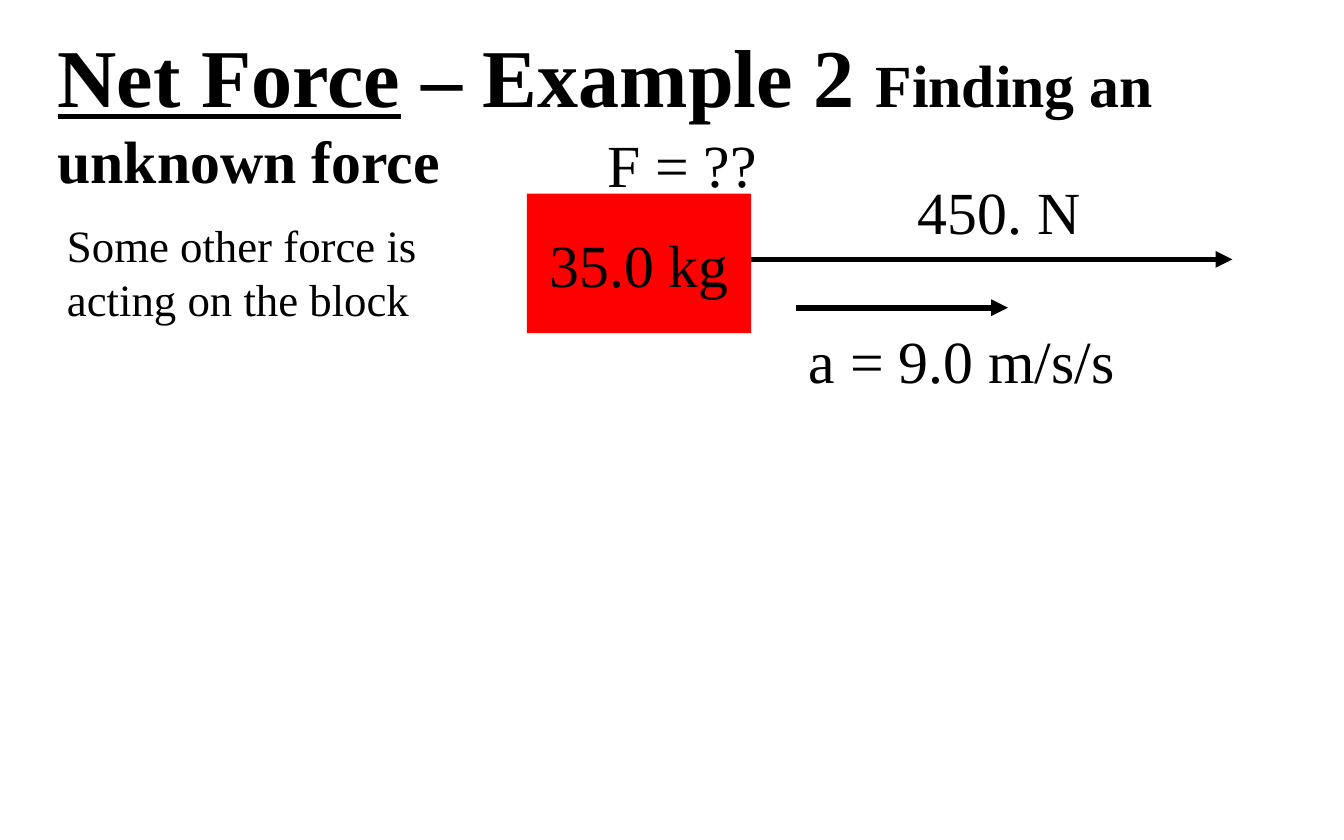
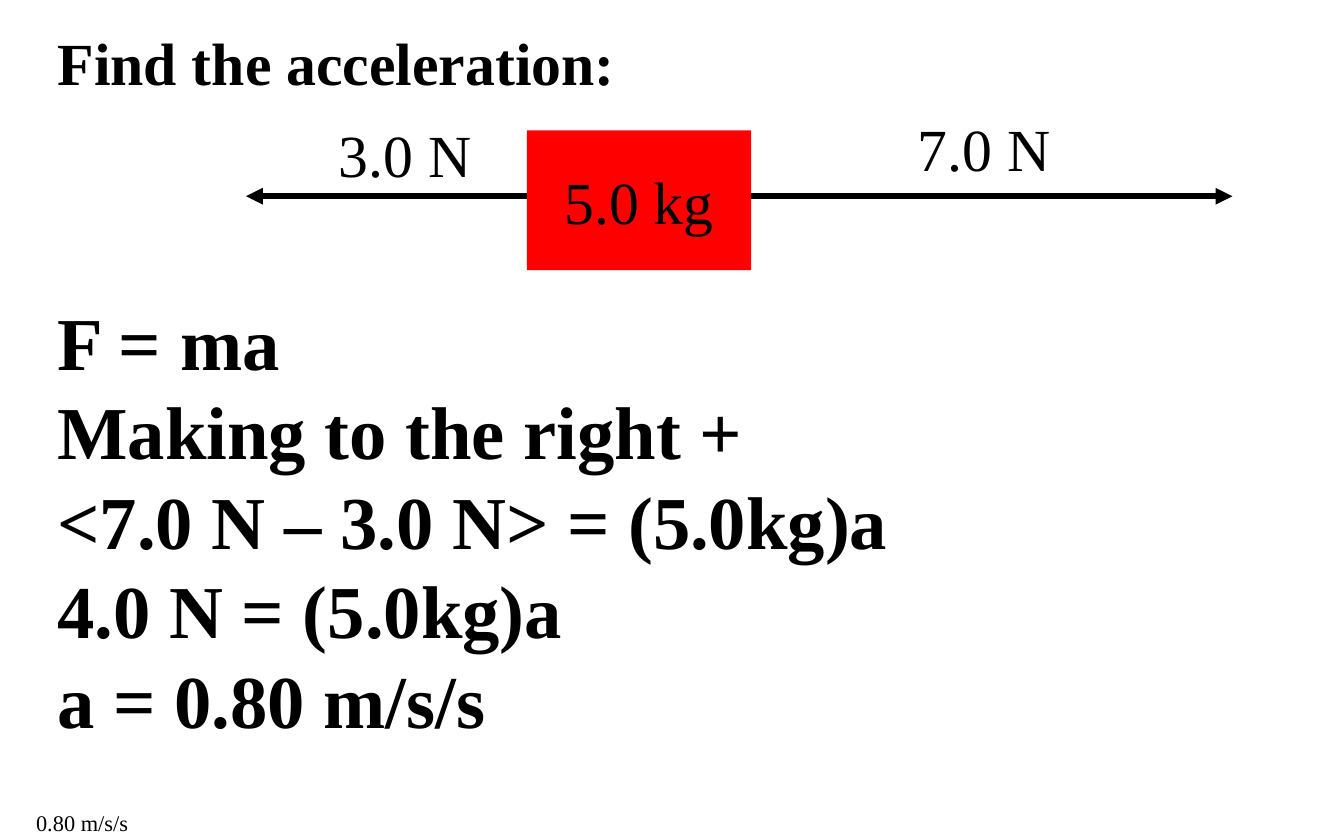
from dataclasses import dataclass

from pptx import Presentation
from pptx.dml.color import RGBColor
from pptx.enum.shapes import MSO_CONNECTOR as Connector, MSO_SHAPE as Shape
from pptx.enum.text import MSO_ANCHOR as Anchor, MSO_AUTO_SIZE as AutoSize, PP_ALIGN as Align
from pptx.oxml.ns import qn
from pptx.util import Inches, Pt
from lxml.etree import SubElement


@dataclass(frozen=True)
class Theme:
    font: str = "Times New Roman"
    ink: RGBColor = RGBColor(0, 0, 0)
    block: RGBColor = RGBColor(255, 0, 0)
    heading: int = 44
    working: int = 40
    body: int = 32
    remark: int = 24
    answer: int = 12
    line: int = 3


THEME = Theme()

# Shared geometry, in inches
TITLE_AT = (0.33, 0.14, 9.08)
BLOCK_LEFT, BLOCK_WIDTH, BLOCK_HEIGHT = 3.92, 1.67, 1.04
BLOCK_RIGHT = BLOCK_LEFT + BLOCK_WIDTH
FORCE_DROP = 0.49   # from the block's top to its force arrows
LABEL_HEIGHT = 0.64

# Title spans: (text, size, underlined)
# Labels: (text, left, top, width); arrows: (from x, to x, drop below block top)
# Notes: (lines, (left, top, width, height), size, bold, wrapped)
SLIDES = [
    {
        "title": [("Net Force", THEME.heading, True),
                  (" – Example 2 ", THEME.heading, False),
                  ("Finding an unknown force", THEME.body, False)],
        "title_height": 1.38,
        "mass": "35.0 kg",
        "block_top": 1.44,
        "arrows": [(BLOCK_RIGHT, 9.17, FORCE_DROP), (5.92, 7.5, 0.85)],
        "labels": [("450. N", 6.73, 1.25, 1.42),
                   ("F = ??", 4.42, 0.9, 1.33),
                   ("a = 9.0 m/s/s", 5.92, 2.36, 2.5)],
        "notes": [(["Some other force is acting on the block"],
                   (0.4, 1.57, 3.02, 0.91), THEME.remark, False, True)],
    },
    {
        "title": [("Find the acceleration:", THEME.body, False)],
        "title_height": LABEL_HEIGHT,
        "mass": "5.0 kg",
        "block_top": 0.97,
        "arrows": [(BLOCK_RIGHT, 9.17, FORCE_DROP), (BLOCK_LEFT, 1.83, FORCE_DROP)],
        "labels": [("7.0 N", 6.73, 0.78, 1.2),
                   ("3.0 N", 2.42, 0.83, 1.2)],
        "notes": [(["F = ma",
                    "Making to the right +",
                    "<7.0 N – 3.0 N> = (5.0kg)a",
                    "4.0 N = (5.0kg)a",
                    "a = 0.80 m/s/s"],
                   (0.33, 2.15, 9.33, 3.47), THEME.working, True, True),
                  (["0.80 m/s/s"],
                   (0.17, 5.97, 0.89, 0.3), THEME.answer, False, False)],
    },
]


def style(font, size, bold=False):
    font.name = THEME.font
    font.size = Pt(size)
    font.bold = bold
    font.color.rgb = THEME.ink


def add_frame(page, at, wrap):
    frame = page.shapes.add_textbox(*map(Inches, at)).text_frame
    frame.word_wrap = wrap
    frame.auto_size = AutoSize.SHAPE_TO_FIT_TEXT
    return frame


def add_text(page, lines, at, size, bold=False, wrap=False):
    frame = add_frame(page, at, wrap)
    frame.text = "\n".join(lines)
    for para in frame.paragraphs:
        style(para.font, size, bold)


def add_title(page, spans, height):
    para = add_frame(page, (*TITLE_AT, height), True).paragraphs[0]
    style(para.font, THEME.body, True)
    for text, size, underlined in spans:
        span = para.add_run()
        span.text = text
        style(span.font, size, True)
        span.font.underline = underlined


def add_block(page, mass, top):
    block = page.shapes.add_shape(
        Shape.RECTANGLE, *map(Inches, (BLOCK_LEFT, top, BLOCK_WIDTH, BLOCK_HEIGHT)))
    block.shadow.inherit = False
    block.fill.solid()
    block.fill.fore_color.rgb = THEME.block
    block.line.fill.background()
    frame = block.text_frame
    frame.word_wrap = False
    frame.vertical_anchor = Anchor.MIDDLE
    frame.text = mass
    para = frame.paragraphs[0]
    para.alignment = Align.CENTER
    style(para.font, THEME.body)


def add_arrow(page, start, end, height):
    arrow = page.shapes.add_connector(
        Connector.STRAIGHT, *map(Inches, (start, height, end, height)))
    arrow.line.color.rgb = THEME.ink
    arrow.line.width = Pt(THEME.line)
    # Arrowhead at the far end, and no shadow
    SubElement(arrow.line._get_or_add_ln(), qn("a:tailEnd"), type="triangle")
    SubElement(arrow._element.spPr, qn("a:effectLst"))


def build_page(deck, content):
    page = deck.slides.add_slide(deck.slide_layouts[6])
    add_title(page, content["title"], content["title_height"])

    # Force diagram
    top = content["block_top"]
    add_block(page, content["mass"], top)
    for start, end, drop in content["arrows"]:
        add_arrow(page, start, end, top + drop)
    for text, *place in content["labels"]:
        add_text(page, [text], (*place, LABEL_HEIGHT), THEME.body)

    # Remarks and working
    for note in content["notes"]:
        add_text(page, *note)


def main():
    deck = Presentation()
    deck.slide_width, deck.slide_height = Inches(10), Inches(6.25)
    for content in SLIDES:
        build_page(deck, content)
    deck.save("out.pptx")


if __name__ == "__main__":
    main()
